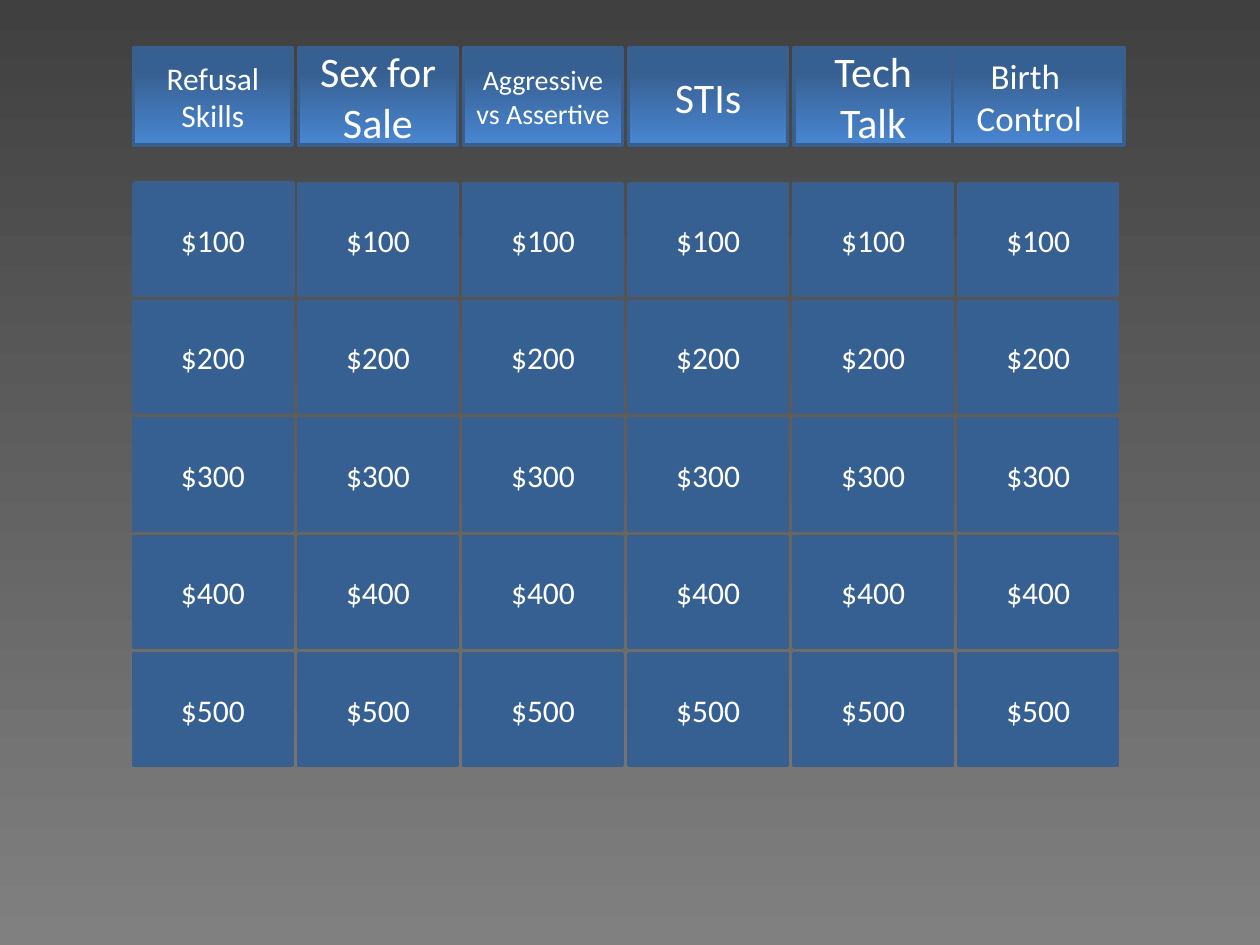
import copy
from dataclasses import dataclass

import pptx
import pptx.dml.color
import pptx.enum.shapes
import pptx.enum.text
import pptx.util


@dataclass(frozen=True)
class Theme:
    font: str = "Calibri"
    text: str = "FFFFFF"
    tile: str = "376092"
    edge: str = "3A5F8C"
    header_stops: tuple = ((0, "376092"), (0.25, "376092"), (1, "4986D2"))
    page_stops: tuple = ((0, "404040"), (1, "808080"))
    edge_width: float = 2
    price_size: int = 18


THEME = Theme()

# Board grid, in inches
LEFT, COLUMN_STEP, TILE_WIDTH = 1.06, 1.31, 1.26
TOP, ROW_STEP, TILE_HEIGHT = 1.46, 3.73 / 4, 0.88
HEADER_TOP, HEADER_HEIGHT = 0.38, 0.77
LAST_HEADER_LEFT, LAST_HEADER_WIDTH = 7.42, 1.5

CATEGORIES = [
    ("Refusal Skills", 18),
    ("Sex for Sale", 24),
    ("Aggressive vs Assertive", 16),
    ("STIs", 24),
    ("Tech Talk", 24),
    ("Birth \nControl", 20),
]
PRICES = ["$100", "$200", "$300", "$400", "$500"]


def rgb(value):
    return pptx.dml.color.RGBColor.from_string(value)


def paint_gradient(fill, element, stops):
    """Fill from top to bottom with any number of stops."""
    fill.gradient()
    fill.gradient_angle = 270
    stop_list = element.xpath(".//a:gsLst")[0]
    while len(stop_list) < len(stops):
        stop_list.append(copy.deepcopy(stop_list[0]))
    for stop, (position, color) in zip(fill.gradient_stops, stops):
        stop.position = position
        stop.color.rgb = rgb(color)


def add_tile(page, left, top, width, height):
    box = page.shapes.add_shape(
        pptx.enum.shapes.MSO_SHAPE.RECTANGLE,
        *(pptx.util.Inches(length) for length in (left, top, width, height)))
    box.shadow.inherit = False
    box.fill.solid()
    box.fill.fore_color.rgb = rgb(THEME.tile)
    box.line.color.rgb = rgb(THEME.edge)
    box.line.width = pptx.util.Pt(THEME.edge_width)
    return box


def write_label(box, text, size):
    frame = box.text_frame
    frame.text = text
    frame.word_wrap = True
    frame.vertical_anchor = pptx.enum.text.MSO_ANCHOR.MIDDLE
    for para in frame.paragraphs:
        para.alignment = pptx.enum.text.PP_ALIGN.CENTER
        for span in para.runs:
            span.font.name = THEME.font
            span.font.size = pptx.util.Pt(size)
            span.font.color.rgb = rgb(THEME.text)


def add_headers(page):
    # Right to left, so that each header lies over its right neighbour
    last = len(CATEGORIES) - 1
    for column in range(last, -1, -1):
        left, width = LEFT + column * COLUMN_STEP, TILE_WIDTH
        if column == last:
            left, width = LAST_HEADER_LEFT, LAST_HEADER_WIDTH
        box = add_tile(page, left, HEADER_TOP, width, HEADER_HEIGHT)
        paint_gradient(box.fill, box._element, THEME.header_stops)
        write_label(box, *CATEGORIES[column])


def add_prices(page):
    for column in range(len(CATEGORIES)):
        for row, price in enumerate(PRICES):
            box = add_tile(page, LEFT + column * COLUMN_STEP,
                           TOP + row * ROW_STEP, TILE_WIDTH, TILE_HEIGHT)
            write_label(box, price, THEME.price_size)


def main():
    deck = pptx.Presentation()
    deck.slide_width = pptx.util.Inches(10)
    deck.slide_height = pptx.util.Inches(7.5)
    page = deck.slides.add_slide(deck.slide_layouts[6])
    paint_gradient(page.background.fill, page._element, THEME.page_stops)

    # Plain tile behind the first price
    add_tile(page, LEFT + 0.01, TOP - 0.01, TILE_WIDTH, TILE_HEIGHT)
    add_headers(page)
    add_prices(page)
    deck.save("out.pptx")


if __name__ == "__main__":
    main()
